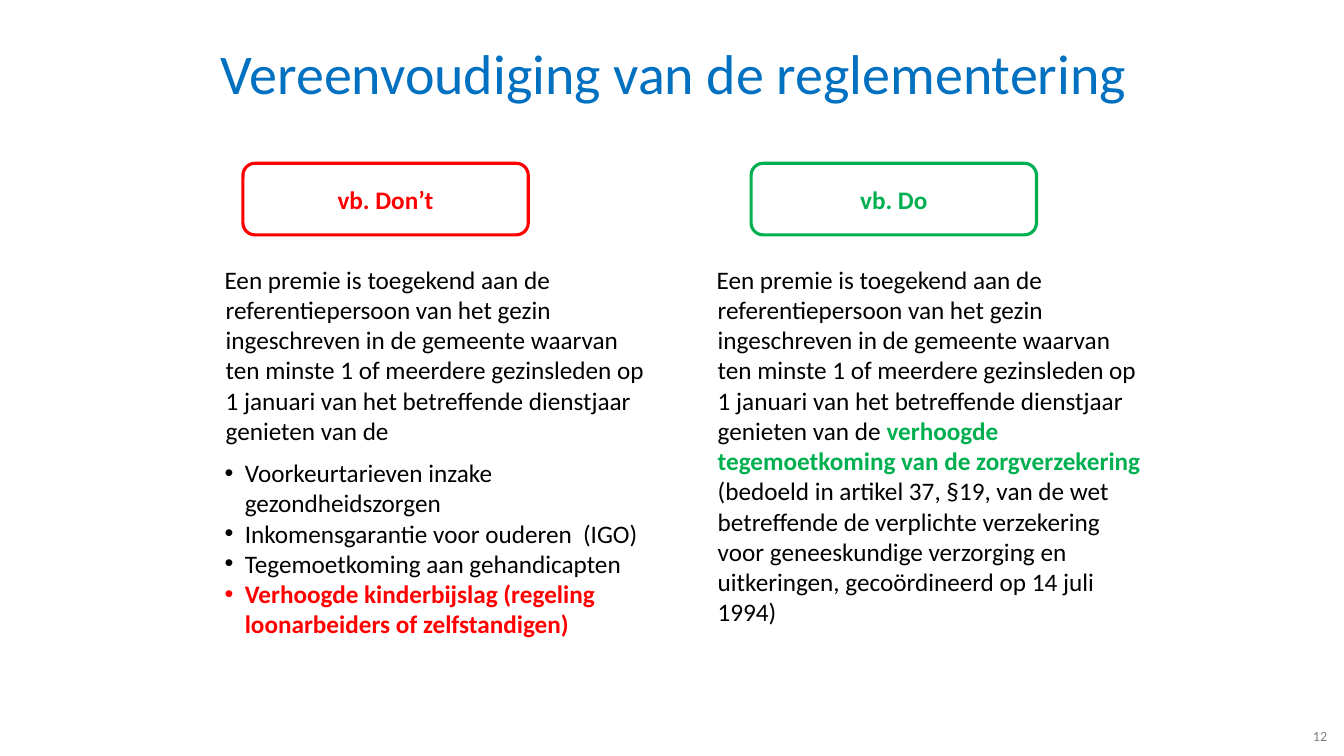
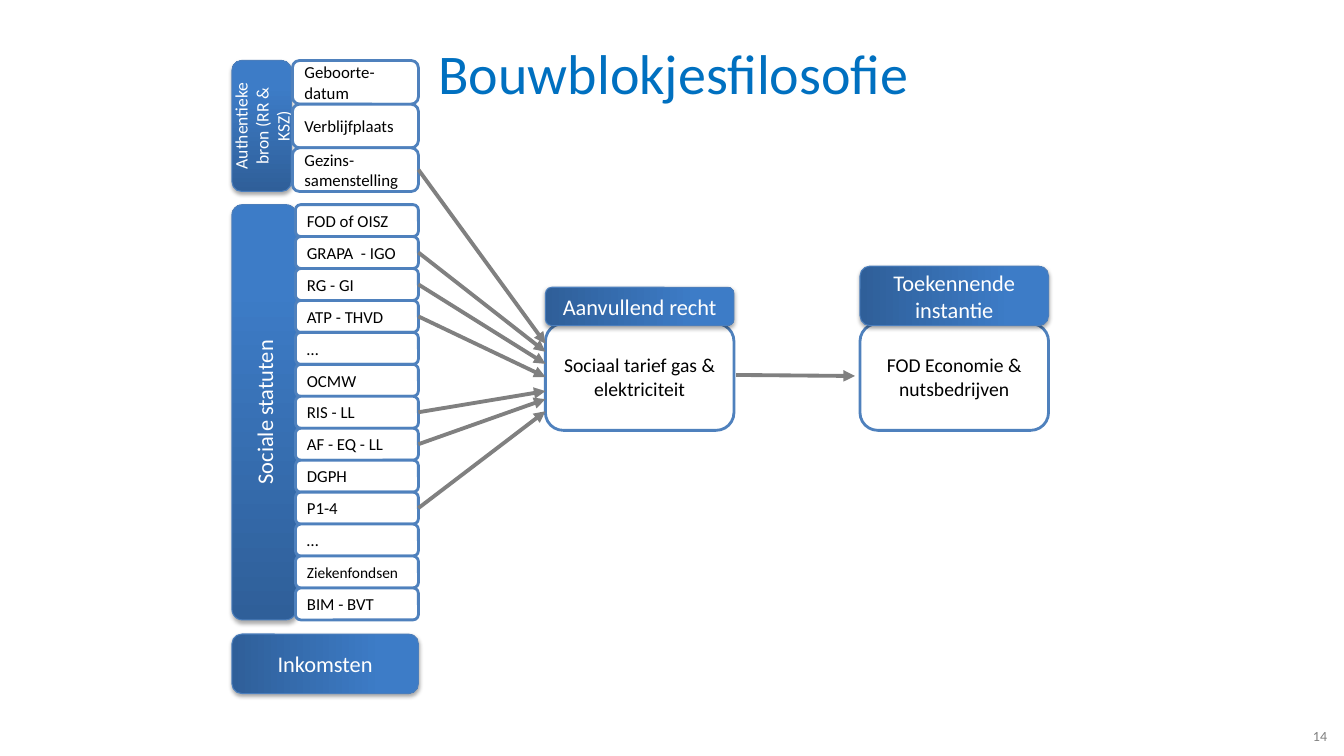
"""Builds two slides on simpler rules and building blocks for social rights."""
from dataclasses import dataclass

from lxml import etree
from pptx import Presentation
from pptx.dml.color import RGBColor
from pptx.enum.shapes import MSO_CONNECTOR, MSO_SHAPE
from pptx.enum.text import MSO_ANCHOR, PP_ALIGN
from pptx.oxml.ns import qn
from pptx.util import Emu, Pt

LEFT, MID, RIGHT = PP_ALIGN.LEFT, PP_ALIGN.CENTER, PP_ALIGN.RIGHT
TOP, CENTER = MSO_ANCHOR.TOP, MSO_ANCHOR.MIDDLE
ROUND, LINE = MSO_SHAPE.ROUNDED_RECTANGLE, MSO_CONNECTOR.STRAIGHT
PX = 9144
WIDE, HIGH = 1333, 750


@dataclass(frozen=True)
class Theme:
    """Holds the colours, font and type sizes."""
    font: str = "Calibri"
    title: str = "0070C0"
    black: str = "000000"
    white: str = "FFFFFF"
    red: str = "FF0000"
    green: str = "00B050"
    gray: str = "808080"
    edge: str = "4F81BD"
    rim: str = "4B7EBC"
    dark: str = "2F5F99"
    light: str = "3D7CC7"
    big: int = 40
    body: int = 18
    head: int = 16
    box: int = 14
    side: float = 12.5
    item: int = 12
    small: int = 11
    page: int = 10


T = Theme()

INTRO = ("Een premie is toegekend aan de referentiepersoon van het gezin "
         "ingeschreven in de gemeente waarvan ten minste 1 of meerdere "
         "gezinsleden op 1 januari van het betreffende dienstjaar genieten van de")
BASIS = ("(bedoeld in artikel 37, §19, van de wet betreffende de verplichte "
         "verzekering voor geneeskundige verzorging en uitkeringen, "
         "gecoördineerd op 14 juli 1994)")
RULES = {
    "title": "Vereenvoudiging van de reglementering",
    "page": "12",
    "cases": [
        {"tag": "vb. Don’t", "color": T.red, "tag_x": 241, "x": 194, "w": 457,
         "text": [(INTRO, False)],
         "list": [("Voorkeurtarieven inzake\ngezondheidszorgen", False),
                  ("Inkomensgarantie voor ouderen  (IGO)", False),
                  ("Tegemoetkoming aan gehandicapten", False),
                  ("Verhoogde kinderbijslag (regeling\n"
                   "loonarbeiders of zelfstandigen)", True)]},
        {"tag": "vb. Do", "color": T.green, "tag_x": 745, "x": 682, "w": 465,
         "text": [(INTRO + " ", False),
                  ("verhoogde tegemoetkoming van de zorgverzekering ", True),
                  (BASIS, False)],
         "list": []},
    ],
}
BLOCKS = {
    "title": "Bouwblokjesfilosofie",
    "page": "14",
    "stacks": [
        {"name": "Authentieke bron (RR & KSZ)", "size": T.side,
         "y": 60, "h": 130, "bar": 59, "x": 290,
         "rows": [("Geboorte-datum", None), ("Verblijfplaats", None),
                  ("Gezins-samenstelling", 341)]},
        {"name": "Sociale statuten", "size": T.head,
         "y": 203, "h": 412, "bar": 64, "x": 293,
         "rows": [("FOD of OISZ", None), ("GRAPA  - IGO", 349),
                  ("RG - GI", 361), ("ATP - THVD", 374), ("…", None),
                  ("OCMW", None), ("RIS - LL", 388), ("AF - EQ - LL", 396),
                  ("DGPH", None), ("P1-4", 408), ("…", None),
                  ("Ziekenfondsen", None), ("BIM - BVT", None)]},
    ],
    "steps": [("Aanvullend recht", 38, "Sociaal tarief gas & elektriciteit", 541),
              ("Toekennende instantie", 59, "FOD Economie & nutsbedrijven", 853)],
}
STACK_X, STACK_END = 230, 415
STEP_Y, STEP_W, STEP_H = 321, 187, 106


def rgb(code):
    """Turns a hex code into a colour."""
    return RGBColor.from_string(code)


def area(*sides):
    """Turns px lengths into EMU."""
    return [Emu(round(side * PX)) for side in sides]


def write(para, text, size, color, bold=False):
    """Adds runs to a paragraph, split at line breaks."""
    for num, part in enumerate(text.split("\n")):
        if num:
            para.add_line_break()
        run = para.add_run()
        run.text = part
        font = run.font
        font.name, font.size, font.bold = T.font, Pt(size), bold
        font.color.rgb = rgb(color)


def indent(para, left, first, bullet=None):
    """Sets a hanging indent and an optional bullet."""
    props = para._p.get_or_add_pPr()
    props.set("marL", str(left * PX))
    props.set("indent", str(first * PX))
    if bullet:
        face = etree.SubElement(props, qn("a:buFont"))
        face.set("typeface", "Arial")
        etree.SubElement(props, qn("a:buChar")).set("char", bullet)


def frame(shape, anchor, align):
    """Prepares a text frame and returns its first paragraph."""
    text = shape.text_frame
    text.word_wrap, text.vertical_anchor = True, anchor
    para = text.paragraphs[0]
    para.alignment = align
    return para


def label(slide, place, text, size, color, align):
    """Adds a one-paragraph text box."""
    box = slide.shapes.add_textbox(*area(*place))
    write(frame(box, CENTER, align), text, size, color)


def panel(slide, place, text, size, color, edge, width, align=MID, bold=False):
    """Adds a white rounded box with a coloured edge."""
    shape = slide.shapes.add_shape(ROUND, *area(*place))
    shape.shadow.inherit = False
    shape.fill.solid()
    shape.fill.fore_color.rgb = rgb(T.white)
    shape.line.color.rgb, shape.line.width = rgb(edge), Pt(width)
    write(frame(shape, CENTER, align), text, size, color, bold)
    return shape


def bar(slide, place, text, size, upright=False):
    """Adds a gradient bar with a soft shadow."""
    shape = panel(slide, place, text, size, T.white, T.rim, 0.75)
    shape.fill.gradient()
    shape.fill.gradient_angle = 90 if upright else 0
    stops = zip(shape.fill.gradient_stops, (T.dark, T.light), (0, 0.8))
    for stop, color, spot in stops:
        stop.color.rgb, stop.position = rgb(color), spot
    if upright:
        shape.text_frame._txBody.bodyPr.set("vert", "vert270")
    effect = shape._element.spPr.find(qn("a:effectLst"))
    shade = etree.SubElement(effect, qn("a:outerShdw"), blurRad=str(Pt(3.1)),
                             dist=str(Pt(1.8)), dir="5400000", rotWithShape="0")
    tint = etree.SubElement(shade, qn("a:srgbClr"), val=T.black)
    etree.SubElement(tint, qn("a:alpha"), val="35000")


def arrow(slide, *ends):
    """Adds a gray arrow between two points."""
    link = slide.shapes.add_connector(LINE, *area(*ends))
    link.line.color.rgb, link.line.width = rgb(T.gray), Pt(2.75)
    etree.SubElement(link.line._get_or_add_ln(), qn("a:tailEnd"), type="triangle")
    etree.SubElement(link._element.spPr, qn("a:effectLst"))


def start(deck, data):
    """Adds a slide with its title and page number."""
    slide = deck.slides.add_slide(deck.slide_layouts[6])
    label(slide, (68, 21, 1200, 101), data["title"], T.big, T.title, MID)
    label(slide, (1217, 710, 109, 40), data["page"], T.page, T.gray, RIGHT)
    return slide


def rules(deck):
    """Builds the comparison of wordings."""
    slide = start(deck, RULES)
    for case in RULES["cases"]:
        color = case["color"]
        panel(slide, (case["tag_x"], 162, 283, 71), case["tag"], T.body,
              color, color, 2.25, bold=True)
        box = slide.shapes.add_textbox(*area(case["x"], 257, case["w"], 385))
        para = frame(box, TOP, LEFT)
        indent(para, 20, -1)
        for text, strong in case["text"]:
            write(para, text, T.body, color if strong else T.black, strong)
        for num, (text, strong) in enumerate(case["list"]):
            para = box.text_frame.add_paragraph()
            indent(para, 39, -20, "•")
            para.space_before = Pt(0 if num else 8.5)
            write(para, text, T.body, color if strong else T.black, strong)


def blocks(deck):
    """Builds the diagram of building blocks."""
    slide = start(deck, BLOCKS)
    goal = BLOCKS["steps"][0][3]
    links = []
    for stack in BLOCKS["stacks"]:
        top, left, rows = stack["y"], stack["x"], stack["rows"]
        bar(slide, (STACK_X, top, stack["bar"], stack["h"]),
            stack["name"], stack["size"], upright=True)
        step = stack["h"] / len(rows)
        for num, (text, end) in enumerate(rows):
            y = top + num * step
            size = T.small if text == "Ziekenfondsen" else T.item
            panel(slide, (left, y, STACK_END - left, step), text, size,
                  T.black, T.edge, 2, LEFT)
            if end:
                links.append((STACK_END, y + step / 2, goal, end))
    bar(slide, (STACK_X, 629, STACK_END - STACK_X, 59), "Inkomsten", T.head)
    for head, high, text, x in BLOCKS["steps"]:
        panel(slide, (x, STEP_Y, STEP_W, STEP_H), text, T.box,
              T.black, T.edge, 2)
        bar(slide, (x, STEP_Y + 2 - high, STEP_W, high), head, T.head)
    links.append((730, 372, 848, 373))
    for link in links:
        arrow(slide, *link)


def main():
    """Builds and saves the deck."""
    deck = Presentation()
    deck.slide_width, deck.slide_height = area(WIDE, HIGH)
    rules(deck)
    blocks(deck)
    deck.save("out.pptx")


if __name__ == "__main__":
    main()
